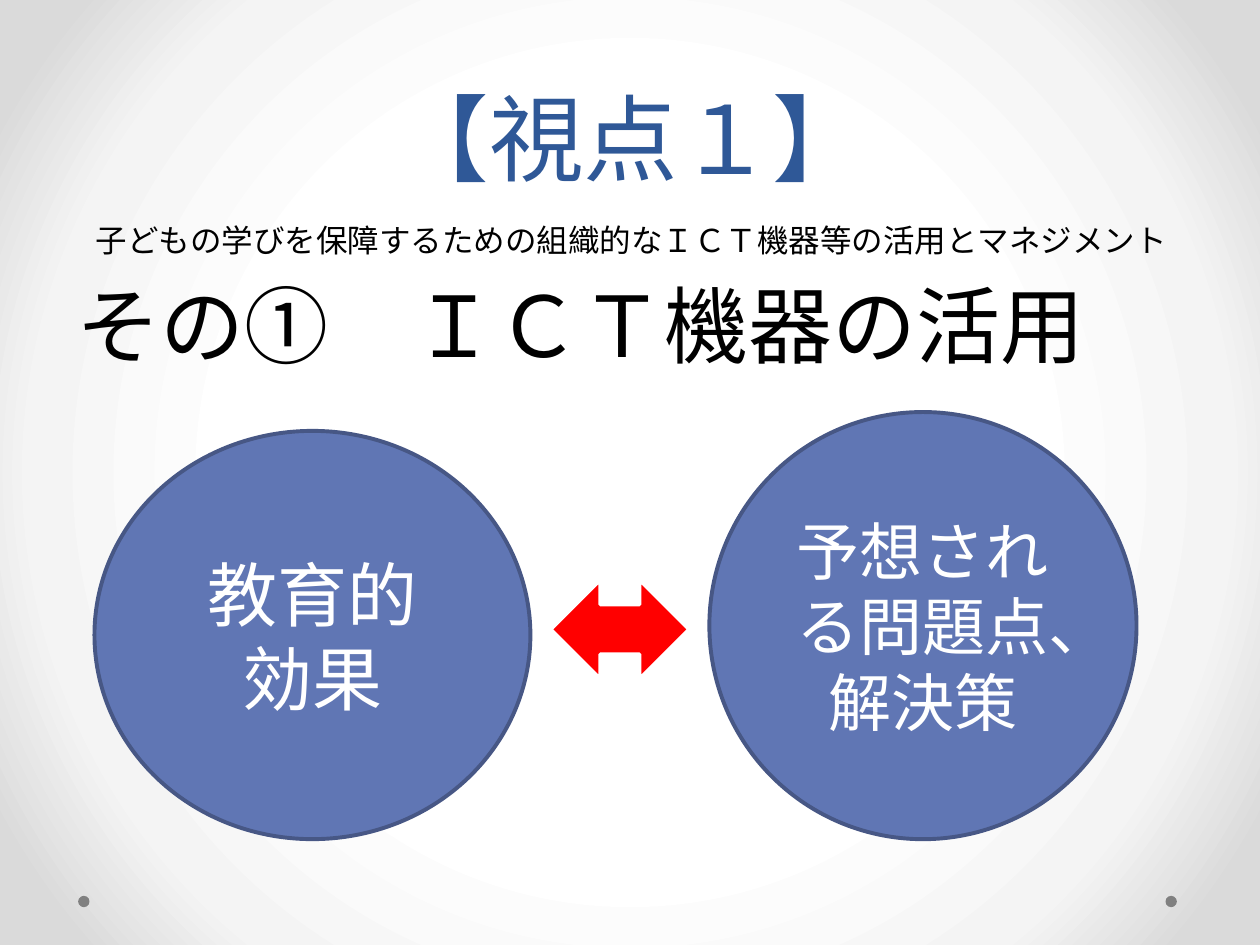
from dataclasses import dataclass

import pptx
import pptx.dml.color
import pptx.enum.shapes
import pptx.enum.text
import pptx.oxml
import pptx.oxml.ns
import pptx.util
from lxml import etree

Pt = pptx.util.Pt
Shapes = pptx.enum.shapes.MSO_SHAPE
Align = pptx.enum.text.PP_ALIGN
Anchor = pptx.enum.text.MSO_ANCHOR

COLORS = {
    "title": "2F5897", "text": "000000", "white": "FFFFFF",
    "circle": "6076B4", "rim": "475785", "arrow": "FF0000", "dot": "808080",
}
BACKDROP = [(50, "FFFFFF"), (76, "F4F4F4"), (92, "DADADA")]
WIDTH, HEIGHT = pptx.util.Inches(10), pptx.util.Inches(7.5)
COLS, ROWS = 1000, 750  # grid units across and down the slide


@dataclass(frozen=True)
class Area:
    col: int
    row: int
    cols: int
    rows: int

    def box(self) -> tuple[int, int, int, int]:
        return (WIDTH * self.col // COLS, HEIGHT * self.row // ROWS,
                WIDTH * self.cols // COLS, HEIGHT * self.rows // ROWS)


@dataclass(frozen=True)
class Topic:
    area: Area
    lines: tuple[str, ...]
    size: int


TOPICS = [
    Topic(Area(75, 342, 346, 324), ("教育的", "効果"), 40),
    Topic(Area(563, 327, 339, 339), ("予想される問題点、", "解決策"), 36),
]
DOTS = [Area(col, 711, 9, 9) for col in (62, 925)]


def rgb(name: str) -> pptx.dml.color.RGBColor:
    return pptx.dml.color.RGBColor.from_string(COLORS[name])


def add_run(paragraph, text: str, size: int, color: str, font: str = "Cambria"):
    run = paragraph.add_run()
    run.text = text
    run.font.size, run.font.name = Pt(size), font
    run.font.color.rgb = rgb(color)
    return run


def add_figure(slide, kind, area: Area, fill: str, line: str | None = None):
    figure = slide.shapes.add_shape(kind, *area.box())
    figure.shadow.inherit = False
    figure.fill.solid()
    figure.fill.fore_color.rgb = rgb(fill)
    if line:
        figure.line.color.rgb = rgb(line)
        figure.line.width = Pt(2.25)
    else:
        figure.line.fill.background()
    return figure


def add_text(slide, area: Area, anchor):
    frame = slide.shapes.add_textbox(*area.box()).text_frame
    frame.word_wrap = True
    frame.vertical_anchor = anchor
    return frame.paragraphs[0]


def add_topic(slide, topic: Topic) -> None:
    frame = add_figure(slide, Shapes.OVAL, topic.area, "circle", "rim").text_frame
    frame.word_wrap = True
    frame.vertical_anchor = Anchor.MIDDLE
    for number, line in enumerate(topic.lines):
        paragraph = frame.add_paragraph() if number else frame.paragraphs[0]
        paragraph.alignment = Align.CENTER
        add_run(paragraph, line, topic.size, "white")


def paint_backdrop(slide) -> None:
    stops = "".join(f'<a:gs pos="{pos * 1000}"><a:srgbClr val="{color}"/></a:gs>'
                    for pos, color in BACKDROP)
    slide.element.cSld.insert(0, pptx.oxml.parse_xml(
        f'<p:bg {pptx.oxml.ns.nsdecls("p", "a")}><p:bgPr><a:gradFill rotWithShape="1">'
        f'<a:gsLst>{stops}</a:gsLst><a:path path="circle">'
        '<a:fillToRect l="50000" t="50000" r="50000" b="50000"/></a:path>'
        '</a:gradFill><a:effectLst/></p:bgPr></p:bg>'))


def add_text_shadow(run) -> None:
    qn = pptx.oxml.ns.qn
    effects = etree.Element(qn("a:effectLst"))
    shadow = etree.SubElement(effects, qn("a:outerShdw"), blurRad="38100",
                              dist="38100", dir="2700000", algn="tl")
    color = etree.SubElement(shadow, qn("a:srgbClr"), val=COLORS["text"])
    etree.SubElement(color, qn("a:alpha"), val="43000")
    run.font.fill._xPr.find(qn("a:solidFill")).addnext(effects)


def main() -> None:
    deck = pptx.Presentation()
    deck.slide_width, deck.slide_height = WIDTH, HEIGHT
    slide = deck.slides.add_slide(deck.slide_layouts[6])

    # Background with its two corner dots
    paint_backdrop(slide)
    for dot in DOTS:
        add_figure(slide, Shapes.OVAL, dot, "dot")

    # Title and subtitle
    title = add_text(slide, Area(51, 68, 900, 142), Anchor.BOTTOM)
    title.alignment = Align.CENTER
    title.line_spacing = Pt(37)
    add_run(title, "【視点１】", 54, "title")
    title.add_line_break()
    add_run(title, "子どもの学びを保障するための組織的なＩＣＴ機器等の活用とマネジメント", 18, "text")

    # Section heading
    heading = add_text(slide, Area(51, 212, 900, 110), Anchor.TOP)
    add_text_shadow(add_run(heading, "その①　ＩＣＴ機器の活用", 48, "text", "Quicksand"))

    # Two topics facing each other
    for topic in TOPICS:
        add_topic(slide, topic)
    add_figure(slide, Shapes.LEFT_RIGHT_ARROW, Area(437, 460, 110, 79), "arrow", "white")

    deck.save("out.pptx")


if __name__ == "__main__":
    main()
